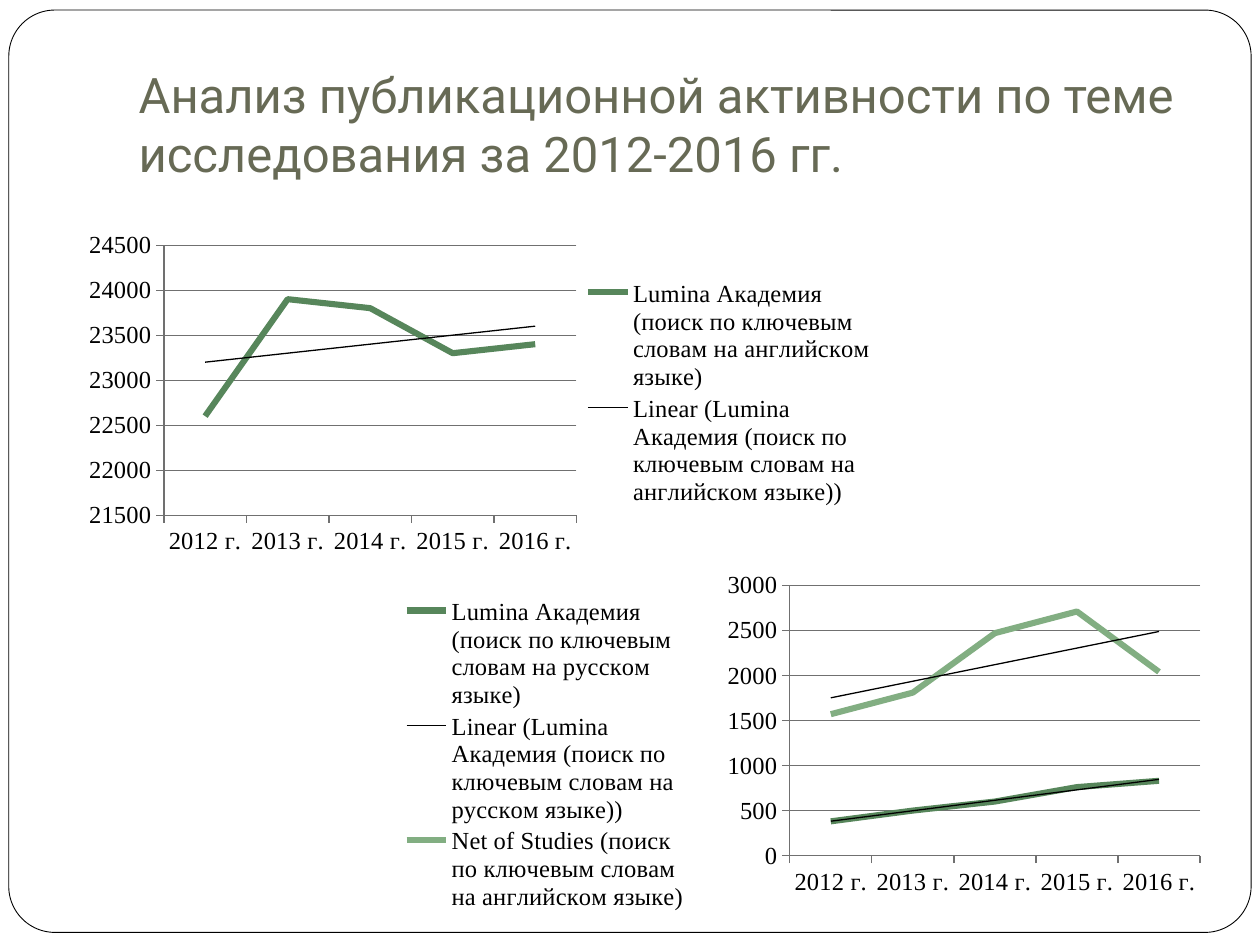
from lxml import etree
from pptx import Presentation
from pptx import util as u
from pptx.chart.data import CategoryChartData
from pptx.dml.color import RGBColor
from pptx.enum import chart as ch, shapes, text
from pptx.oxml import parse_xml
from pptx.oxml.ns import nsdecls, qn

COLORS = {"frame": "000000", "paper": "FFFFFF", "title": "676A55", "label": "000000",
          "axis": "707070", "trend": "000000", "green": "72A376", "pale": "B0CCB0"}
FONTS = {"title": "Roboto", "chart": "Times New Roman"}
TITLE = "Анализ публикационной активности по теме исследования за 2012-2016 гг."
YEARS = [f"{year} г." for year in range(2012, 2017)]
CHARTS = [
    {"box": (3.11, 4.46, 6.5, 2.83), "scale": (0, 3000, 500), "hidden": (2, 3),
     "plot": (0.486, 0.066, 0.501, 0.758), "legend": (0.01, 0.09, 0.36, 0.9),
     "series": [
         ("Lumina Академия (поиск по ключевым словам на русском языке)",
          "green", (380, 500, 600, 760, 830)),
         ("Net of Studies (поиск по ключевым словам на английском языке)",
          "pale", (1570, 1810, 2470, 2710, 2040))]},
    {"box": (0.59, 1.78, 6.46, 2.68), "scale": (21500, 24500, 500), "hidden": (1,),
     "plot": (0.11, 0.062, 0.507, 0.8), "legend": None,
     "series": [
         ("Lumina Академия (поиск по ключевым словам на английском языке)",
          "green", (22600, 23900, 23800, 23300, 23400))]},
]


def color(name):
    return RGBColor.from_string(COLORS[name])


def inches(values):
    return [u.Inches(value) for value in values]


def style_line(line, name, width):
    line.color.rgb = color(name)
    line.width = u.Pt(width)


def layout_xml(box, inner=False):
    """Manual chart layout from shares of the chart's size."""
    target = '<c:layoutTarget val="inner"/>' if inner else ""
    modes = "".join(f'<c:{side}Mode val="edge"/>' for side in "xy")
    sizes = "".join(f'<c:{side} val="{share}"/>' for side, share in zip("xywh", box))
    return parse_xml(f'<c:layout {nsdecls("c")}><c:manualLayout>{target}{modes}{sizes}'
                     '</c:manualLayout></c:layout>')


def add_trend(series):
    trend = parse_xml(
        f'<c:trendline {nsdecls("c", "a")}><c:spPr><a:ln w="9525"><a:solidFill>'
        f'<a:srgbClr val="{COLORS["trend"]}"/></a:solidFill></a:ln></c:spPr>'
        '<c:trendlineType val="linear"/><c:dispRSqr val="0"/><c:dispEq val="0"/>'
        '</c:trendline>')
    series._element.find(qn("c:cat")).addprevious(trend)


def set_legend(chart, hidden, box):
    chart.has_legend = True
    legend = chart.legend
    legend.position = ch.XL_LEGEND_POSITION.RIGHT
    legend.include_in_layout = False
    element = legend._element
    for old in element.findall(qn("c:layout")):
        element.remove(old)
    anchor = element.find(qn("c:legendPos"))
    if box:
        anchor.addnext(layout_xml(box))
    for index in reversed(hidden):
        entry = etree.Element(qn("c:legendEntry"))
        etree.SubElement(entry, qn("c:idx")).set("val", str(index))
        etree.SubElement(entry, qn("c:delete")).set("val", "1")
        anchor.addnext(entry)


def add_line_chart(slide, item):
    data = CategoryChartData()
    data.categories = YEARS
    for name, _, values in item["series"]:
        data.add_series(name, values)
    chart = slide.shapes.add_chart(ch.XL_CHART_TYPE.LINE, *inches(item["box"]), data).chart
    chart.has_title = False
    chart.font.size = u.Pt(14)
    chart.font.name = FONTS["chart"]
    chart.font.color.rgb = color("label")

    plot = chart.plots[0]
    plot.vary_by_categories = False
    for series, (_, name, _) in zip(plot.series, item["series"]):
        series.smooth = False
        style_line(series.format.line, name, 3.5)
        series.format.line.color.brightness = -0.2
        add_trend(series)

    for axis in (chart.category_axis, chart.value_axis):
        axis.major_tick_mark = ch.XL_TICK_MARK.OUTSIDE
        axis.minor_tick_mark = ch.XL_TICK_MARK.NONE
        style_line(axis.format.line, "axis", 0.75)
    values = chart.value_axis
    values.minimum_scale, values.maximum_scale, values.major_unit = item["scale"]
    values.has_major_gridlines = True
    style_line(values.major_gridlines.format.line, "axis", 0.75)

    area = chart._chartSpace.chart.plotArea
    for old in area.findall(qn("c:layout")):
        area.remove(old)
    area.insert(0, layout_xml(item["plot"], inner=True))
    set_legend(chart, item["hidden"], item["legend"])


def add_frame(slide):
    frame = slide.shapes.add_shape(shapes.MSO_SHAPE.ROUNDED_RECTANGLE,
                                   *inches((0.07, 0.08, 9.86, 7.32)))
    frame.adjustments[0] = 0.05
    frame.shadow.inherit = False
    frame.fill.solid()
    frame.fill.fore_color.rgb = color("paper")
    style_line(frame.line, "frame", 0.5)
    slide.shapes._spTree.insert(2, frame._element)


def set_title(slide):
    title = slide.shapes.title
    title.left, title.top, title.width, title.height = inches((1, 0.3, 8.5, 1.25))
    frame = title.text_frame
    frame.word_wrap = True
    frame.auto_size = text.MSO_AUTO_SIZE.NONE
    frame.vertical_anchor = text.MSO_ANCHOR.BOTTOM
    frame.margin_left = frame.margin_right = frame.margin_bottom = u.Inches(0.1)
    frame.margin_top = u.Inches(0.05)
    paragraph = frame.paragraphs[0]
    paragraph.alignment = text.PP_ALIGN.LEFT
    run = paragraph.add_run()
    run.text = TITLE
    run.font.size = u.Pt(28)
    run.font.name = FONTS["title"]
    run.font.color.rgb = color("title")


def main():
    presentation = Presentation()
    presentation.slide_width, presentation.slide_height = inches((10, 7.5))
    slide = presentation.slides.add_slide(presentation.slide_layouts[5])
    add_frame(slide)
    set_title(slide)
    for item in CHARTS:
        add_line_chart(slide, item)
    presentation.save("out.pptx")


if __name__ == "__main__":
    main()
